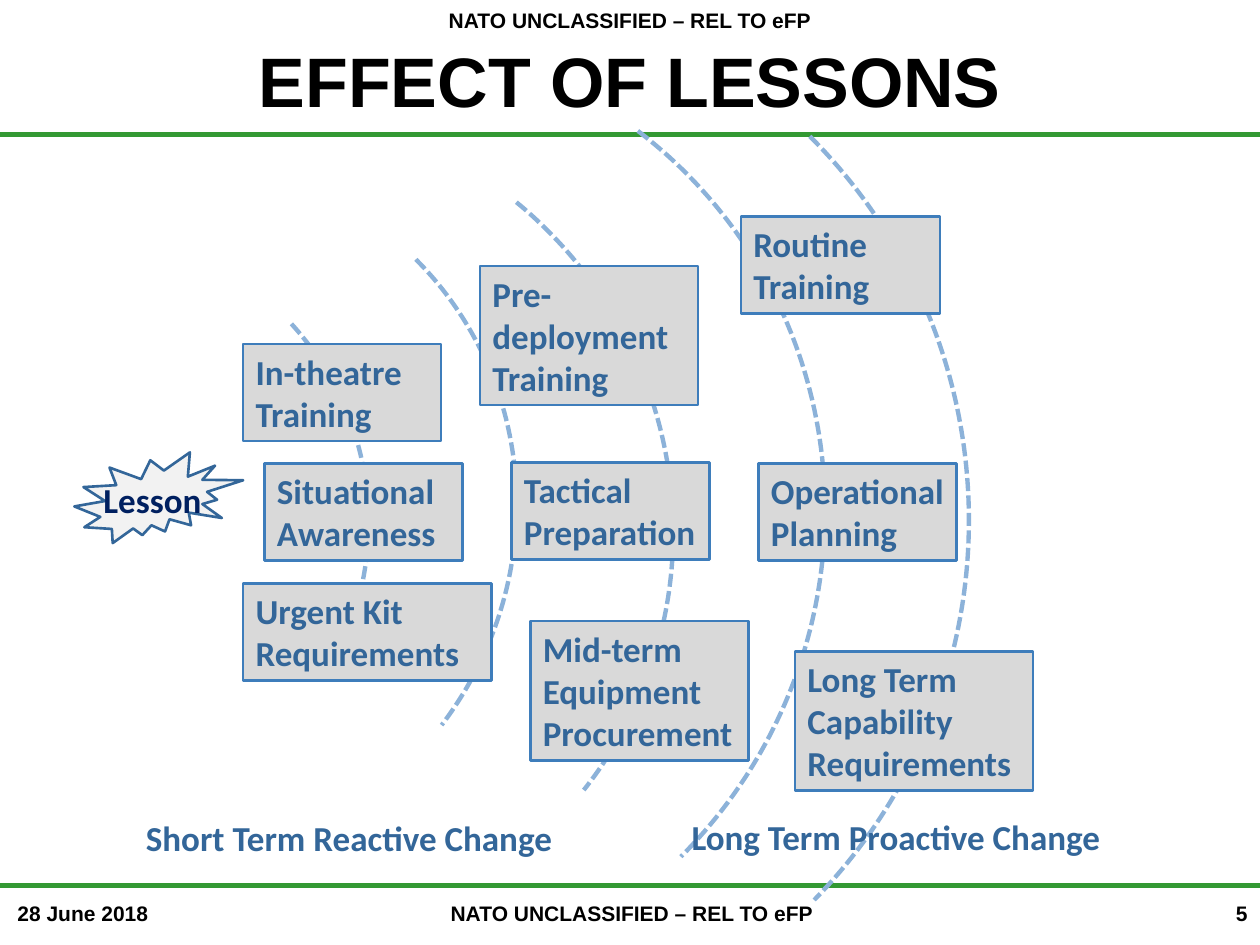
from pptx import Presentation
from pptx.dml.color import RGBColor
from pptx.enum.dml import MSO_LINE
from pptx.enum.shapes import MSO_CONNECTOR, MSO_SHAPE
from pptx.enum.text import MSO_ANCHOR, MSO_AUTO_SIZE, PP_ALIGN
from pptx.oxml.ns import qn
from pptx.util import Inches, Pt

WIDTH, HEIGHT = 10, 7.5
BLACK, GREEN, BLUE, NAVY = "000000", "339933", "336699", "002060"
CARD_FILL, CARD_LINE, WAVE_LINE, BURST_FILL = "D9D9D9", "3E7DBB", "8CB2D9", "F2F2F2"

TITLE = "EFFECT OF LESSONS"
MARKING = "NATO UNCLASSIFIED – REL TO eFP"
RULE_TOPS = (1.07, 7.03)

# text, (left, top, width, height), alignment
MARGIN_TEXTS = [
    (MARKING, (0, 0.01, WIDTH, 0.3), PP_ALIGN.CENTER),
    (MARKING, (2.3, 7.1, 5.43, 0.3), PP_ALIGN.CENTER),
    ("28 June 2018", (0.04, 7.1, 1.89, 0.3), PP_ALIGN.LEFT),
    ("5", (7.92, 7.1, 2.08, 0.3), PP_ALIGN.RIGHT),
]

# (left, top, width, height), (start, end) of the arc adjustments
WAVES = [
    ((-1.75, 1.81, 4.68, 4.66), (163.6, 206.1)),
    ((-1.51, 1.22, 5.57, 5.73), (162, 211.1)),
    ((-1.36, 0.86, 6.73, 6.62), (158.53, 212.18)),
    ((-1.1, 0.24, 7.62, 7.73), (157.5, 0)),
    ((-0.93, -0.18, 8.62, 8.62), (162, 215.61)),
]

LESSON = ("Lesson", (0.59, 3.59, 1.34, 0.72))

# text, left, top, width, number of text lines
CARDS = [
    ("In-theatre Training", 1.93, 2.73, 1.57, 2),
    ("Pre-deployment Training", 3.81, 2.11, 1.73, 3),
    ("Routine Training", 5.88, 1.72, 1.58, 2),
    ("Situational Awareness", 2.1, 3.68, 1.57, 2),
    ("Tactical Preparation", 4.06, 3.67, 1.57, 2),
    ("Operational Planning", 6.02, 3.68, 1.57, 2),
    ("Urgent Kit Requirements", 1.93, 4.63, 1.97, 2),
    ("Mid-term Equipment Procurement", 4.21, 4.93, 1.73, 3),
    ("Long Term Capability Requirements", 6.31, 5.17, 1.89, 3),
]
CARD_PADDING, CARD_LINE_HEIGHT = 0.1, 0.335

CAPTIONS = [
    ("Short Term Reactive Change", (1.06, 6.43, 3.54, 0.44)),
    ("Long Term Proactive Change", (5.39, 6.42, 3.54, 0.44)),
]


def rgb(value):
    return RGBColor.from_string(value)


def inches(lengths):
    return [Inches(length) for length in lengths]


def write(shape, text, size, font, color, align=PP_ALIGN.LEFT):
    frame = shape.text_frame
    frame.word_wrap = True
    para = frame.paragraphs[0]
    para.alignment = align
    span = para.add_run()
    span.text = text
    span.font.size = Pt(size)
    span.font.name = font
    span.font.bold = True
    span.font.color.rgb = rgb(color)
    return frame


def add_text(page, place, *style):
    box = page.shapes.add_textbox(*inches(place))
    write(box, *style).auto_size = MSO_AUTO_SIZE.SHAPE_TO_FIT_TEXT


def add_outlined(page, kind, place, line, weight, fill=None):
    shape = page.shapes.add_shape(kind, *inches(place))
    shape.shadow.inherit = False
    shape.line.color.rgb = rgb(line)
    shape.line.width = Pt(weight)
    if fill:
        shape.fill.solid()
        shape.fill.fore_color.rgb = rgb(fill)
    else:
        shape.fill.background()
    return shape


def add_rule(page, top):
    rule = page.shapes.add_connector(
        MSO_CONNECTOR.STRAIGHT, *inches((0, top, WIDTH, top)))
    rule.line.color.rgb = rgb(GREEN)
    rule.line.width = Pt(3)
    properties = rule._element.spPr
    properties.append(properties.makeelement(qn("a:effectLst"), {}))


def main():
    deck = Presentation()
    deck.slide_width, deck.slide_height = inches((WIDTH, HEIGHT))
    page = deck.slides.add_slide(deck.slide_layouts[5])

    title = page.shapes.title
    title.left, title.top, title.width, title.height = inches((0.5, 0.2, 9, 1.25))
    frame = write(title, TITLE, 40, "Arial", BLACK, PP_ALIGN.CENTER)
    frame.vertical_anchor = MSO_ANCHOR.TOP
    frame.margin_top = Inches(0.1)

    for top in RULE_TOPS:
        add_rule(page, top)
    for text, place, align in MARGIN_TEXTS:
        add_text(page, place, text, 12, "Arial", BLACK, align)

    for place, ends in WAVES:
        wave = add_outlined(page, MSO_SHAPE.ARC, place, WAVE_LINE, 2.5)
        wave.line.dash_style = MSO_LINE.SQUARE_DOT
        wave.rotation = 45
        wave.adjustments[0], wave.adjustments[1] = ends

    text, place = LESSON
    burst = add_outlined(page, MSO_SHAPE.EXPLOSION2, place, BLUE, 1.5, BURST_FILL)
    frame = write(burst, text, 20, "Calibri", NAVY, PP_ALIGN.CENTER)
    frame.word_wrap = False
    frame.vertical_anchor = MSO_ANCHOR.MIDDLE

    for text, left, top, width, lines in CARDS:
        height = CARD_PADDING + lines * CARD_LINE_HEIGHT
        card = add_outlined(page, MSO_SHAPE.RECTANGLE, (left, top, width, height),
                            CARD_LINE, 1.5, CARD_FILL)
        frame = write(card, text, 20, "Calibri", BLUE)
        frame.vertical_anchor = MSO_ANCHOR.TOP
        frame.auto_size = MSO_AUTO_SIZE.SHAPE_TO_FIT_TEXT

    for text, place in CAPTIONS:
        add_text(page, place, text, 20, "Calibri", BLUE)

    deck.save("out.pptx")


if __name__ == "__main__":
    main()
